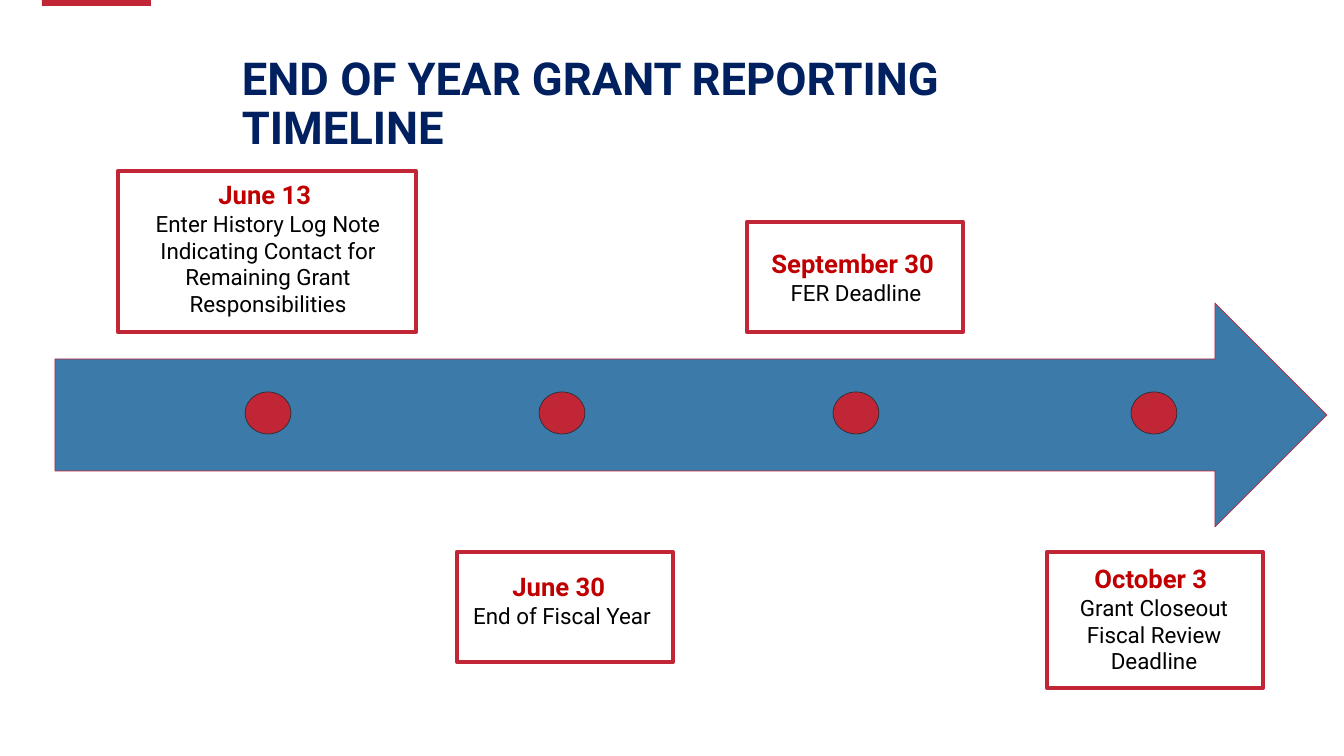
"""Build the end-of-year grant reporting timeline slide."""
from pptx import Presentation, util as u
from pptx.dml.color import RGBColor
from pptx.enum import shapes, text

RED = RGBColor(0xC1, 0x26, 0x37)
DATE_RED = RGBColor(0xC0, 0x00, 0x00)
NAVY = RGBColor(0x00, 0x20, 0x60)
BLUE = RGBColor(0x3C, 0x7B, 0xA9)
SLATE = RGBColor(0x2A, 0x2F, 0x36)
BLACK = RGBColor(0x00, 0x00, 0x00)
FONT = "Roboto"
EMU_PER_PX = 914400 / 100.8

TITLE = "END OF YEAR GRANT REPORTING TIMELINE"
TITLE_AREA = (232, 51, 881, 76)
ACCENT_AREA = (42, 0, 109, 6)
ARROW_AREA = (55, 303, 1272, 224)
DOT_TOP, DOT_WIDTH, DOT_HEIGHT = 392, 46, 42

# date, event, dot left, frame area, wording area
MILESTONES = [
    ("June 13 ", "Enter History Log Note Indicating Contact for Remaining Grant Responsibilities",
     245, (118, 171, 298, 161), (119, 179, 298, 148)),
    ("June 30 ", "End of Fiscal Year",
     539, (457, 552, 216, 110), (468, 571, 188, 74)),
    ("September 30 ", "FER Deadline",
     833, (747, 222, 216, 110), (749, 248, 214, 57)),
    ("October 3\u00a0".replace("\u00a0", " "), "Grant Closeout Fiscal Review Deadline",
     1131, (1047, 552, 216, 136), (1072, 563, 164, 114)),
]


def px(length):
    return u.Emu(round(length * EMU_PER_PX))


def add_figure(slide, kind, area, fill=None, line=None, weight=0.5):
    figure = slide.shapes.add_shape(kind, *map(px, area))
    figure.shadow.inherit = False
    if fill is None:
        figure.fill.background()
    else:
        figure.fill.solid()
        figure.fill.fore_color.rgb = fill
    if line is None:
        figure.line.fill.background()
    else:
        figure.line.color.rgb = line
        figure.line.width = u.Pt(weight)


def add_wording(slide, area, lines, align, inset=(0, 0)):
    frame = slide.shapes.add_textbox(*map(px, area)).text_frame
    frame.word_wrap = True
    frame.vertical_anchor = text.MSO_ANCHOR.TOP
    frame.margin_left = frame.margin_right = px(inset[0])
    frame.margin_top = frame.margin_bottom = px(inset[1])
    for index, (wording, size, color, bold) in enumerate(lines):
        paragraph = frame.add_paragraph() if index else frame.paragraphs[0]
        paragraph.text = wording
        paragraph.alignment = align
        paragraph.font.name = FONT
        paragraph.font.size = u.Pt(size)
        paragraph.font.bold = bold
        paragraph.font.color.rgb = color
    return frame


def main():
    deck = Presentation()
    deck.slide_width, deck.slide_height = px(1344), px(756)
    slide = deck.slides.add_slide(deck.slide_layouts[6])
    kinds = shapes.MSO_SHAPE

    add_figure(slide, kinds.RECTANGLE, ACCENT_AREA, RED)
    title = add_wording(slide, TITLE_AREA, [(TITLE, 32.4, NAVY, True)],
                        text.PP_ALIGN.LEFT, (10, 5))
    title.paragraphs[0].line_spacing = 0.9
    add_figure(slide, kinds.RIGHT_ARROW, ARROW_AREA, BLUE, RED)

    for date, event, dot_left, frame_area, wording_area in MILESTONES:
        add_figure(slide, kinds.FLOWCHART_CONNECTOR,
                   (dot_left, DOT_TOP, DOT_WIDTH, DOT_HEIGHT), RED, SLATE)
        add_wording(slide, wording_area,
                    [(date, 18.3, DATE_RED, True), (event, 16, BLACK, False)],
                    text.PP_ALIGN.CENTER)
        add_figure(slide, kinds.RECTANGLE, frame_area, line=RED, weight=3)

    deck.save("out.pptx")


if __name__ == "__main__":
    main()
